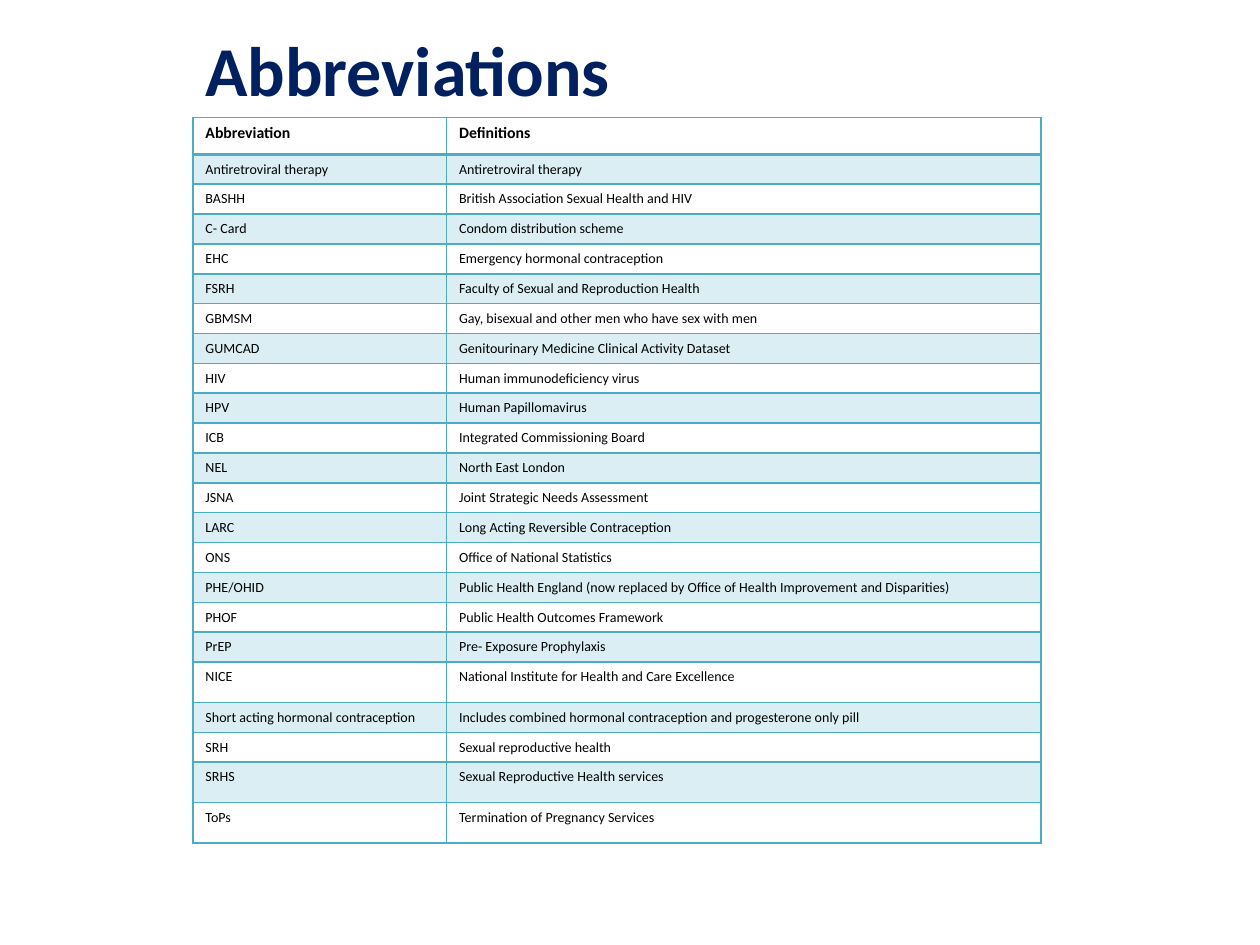
from lxml import etree
from pptx import Presentation
from pptx.dml.color import RGBColor
from pptx.enum.text import MSO_ANCHOR, MSO_AUTO_SIZE, PP_ALIGN
from pptx.oxml.ns import qn
from pptx.util import Pt

TOP = MSO_ANCHOR.TOP
LEFT = PP_ALIGN.LEFT
NO_AUTOFIT = MSO_AUTO_SIZE.NONE

NAVY = RGBColor(0x00, 0x20, 0x60)
TEAL = RGBColor(0x4B, 0xAC, 0xC6)
BLACK = RGBColor(0x00, 0x00, 0x00)
FONT = "Calibri"
BAND_ALPHA = 20

HEADINGS = ("Abbreviation", "Definitions")
ENTRIES = [
    ("Antiretroviral therapy", "Antiretroviral therapy"),
    ("BASHH", "British Association Sexual Health and HIV"),
    ("C- Card", "Condom distribution scheme"),
    ("EHC", "Emergency hormonal contraception"),
    ("FSRH", "Faculty of Sexual and Reproduction Health"),
    ("GBMSM", "Gay, bisexual and other men who have sex with men"),
    ("GUMCAD", "Genitourinary Medicine Clinical Activity Dataset"),
    ("HIV", "Human immunodeficiency virus"),
    ("HPV", "Human Papillomavirus"),
    ("ICB", "Integrated Commissioning Board"),
    ("NEL", "North East London"),
    ("JSNA", "Joint Strategic Needs Assessment"),
    ("LARC", "Long Acting Reversible Contraception"),
    ("ONS", "Office of National Statistics"),
    ("PHE/OHID", "Public Health England (now replaced by Office of Health "
                 "Improvement and Disparities)"),
    ("PHOF", "Public Health Outcomes Framework"),
    ("PrEP", "Pre- Exposure Prophylaxis"),
    ("NICE", "National Institute for Health and Care Excellence"),
    ("Short acting hormonal contraception",
     "Includes combined hormonal contraception and progesterone only pill"),
    ("SRH", "Sexual reproductive health"),
    ("SRHS", "Sexual Reproductive Health services"),
    ("ToPs", "Termination of Pregnancy Services"),
]
TALL_ENTRIES = {"NICE", "SRHS", "ToPs"}
HEADING_HEIGHT, ENTRY_HEIGHT, TALL_HEIGHT = 21.2, 17.06, 23.15
ABBREVIATION_SHARE = 0.299


def add_run(paragraph, words, size, color, bold):
    paragraph.alignment = LEFT
    run = paragraph.add_run()
    run.text = words
    run.font.name = FONT
    run.font.size = Pt(size)
    run.font.bold = bold
    run.font.color.rgb = color


def add_heading(slide, left, top, width, height):
    heading = slide.shapes.title
    heading.left, heading.top = Pt(left), Pt(top)
    heading.width, heading.height = Pt(width), Pt(height)
    frame = heading.text_frame
    frame.auto_size = NO_AUTOFIT
    frame.vertical_anchor = TOP
    frame.margin_top = Pt(5.5)
    add_run(frame.paragraphs[0], "Abbreviations", 40, NAVY, True)


def set_borders(cell, widths):
    properties = cell._tc.get_or_add_tcPr()
    for side, width in widths.items():
        line = etree.SubElement(properties, qn(f"a:ln{side}"), w=str(Pt(width)))
        fill = etree.SubElement(line, qn("a:solidFill"))
        etree.SubElement(fill, qn("a:srgbClr"), val=str(TEAL))


def fill_band(cell):
    cell.fill.solid()
    cell.fill.fore_color.rgb = TEAL
    color = cell._tc.tcPr.find(qn("a:solidFill")).find(qn("a:srgbClr"))
    etree.SubElement(color, qn("a:alpha"), val=str(BAND_ALPHA * 1000))


def row_height(index, abbreviation):
    if index == 0:
        return HEADING_HEIGHT
    return TALL_HEIGHT if abbreviation in TALL_ENTRIES else ENTRY_HEIGHT


def add_glossary(slide, left, top, width):
    rows = [HEADINGS] + ENTRIES
    heights = [row_height(i, row[0]) for i, row in enumerate(rows)]
    glossary = slide.shapes.add_table(
        len(rows), len(HEADINGS), Pt(left), Pt(top), Pt(width), Pt(sum(heights))
    ).table
    glossary.columns[0].width = Pt(width * ABBREVIATION_SHARE)
    glossary.columns[1].width = Pt(width * (1 - ABBREVIATION_SHARE))

    for i, (row, height) in enumerate(zip(rows, heights)):
        glossary.rows[i].height = Pt(height)
        is_heading = i == 0
        borders = {"L": 1, "R": 1, "T": 2 if i == 1 else 1, "B": 2 if is_heading else 1}
        for j, words in enumerate(row):
            cell = glossary.cell(i, j)
            cell.vertical_anchor = TOP
            set_borders(cell, borders)
            if i % 2:
                fill_band(cell)
            else:
                cell.fill.background()
            add_run(cell.text_frame.paragraphs[0], words,
                    9 if is_heading else 8, BLACK, is_heading)


def main():
    presentation = Presentation()
    presentation.slide_width, presentation.slide_height = Pt(720), Pt(540)
    slide = presentation.slides.add_slide(presentation.slide_layouts[5])
    add_heading(slide, 110.2, 9.4, 417.6, 42.5)
    add_glossary(slide, 110.2, 67, 484.8)
    presentation.save("out.pptx")


if __name__ == "__main__":
    main()
